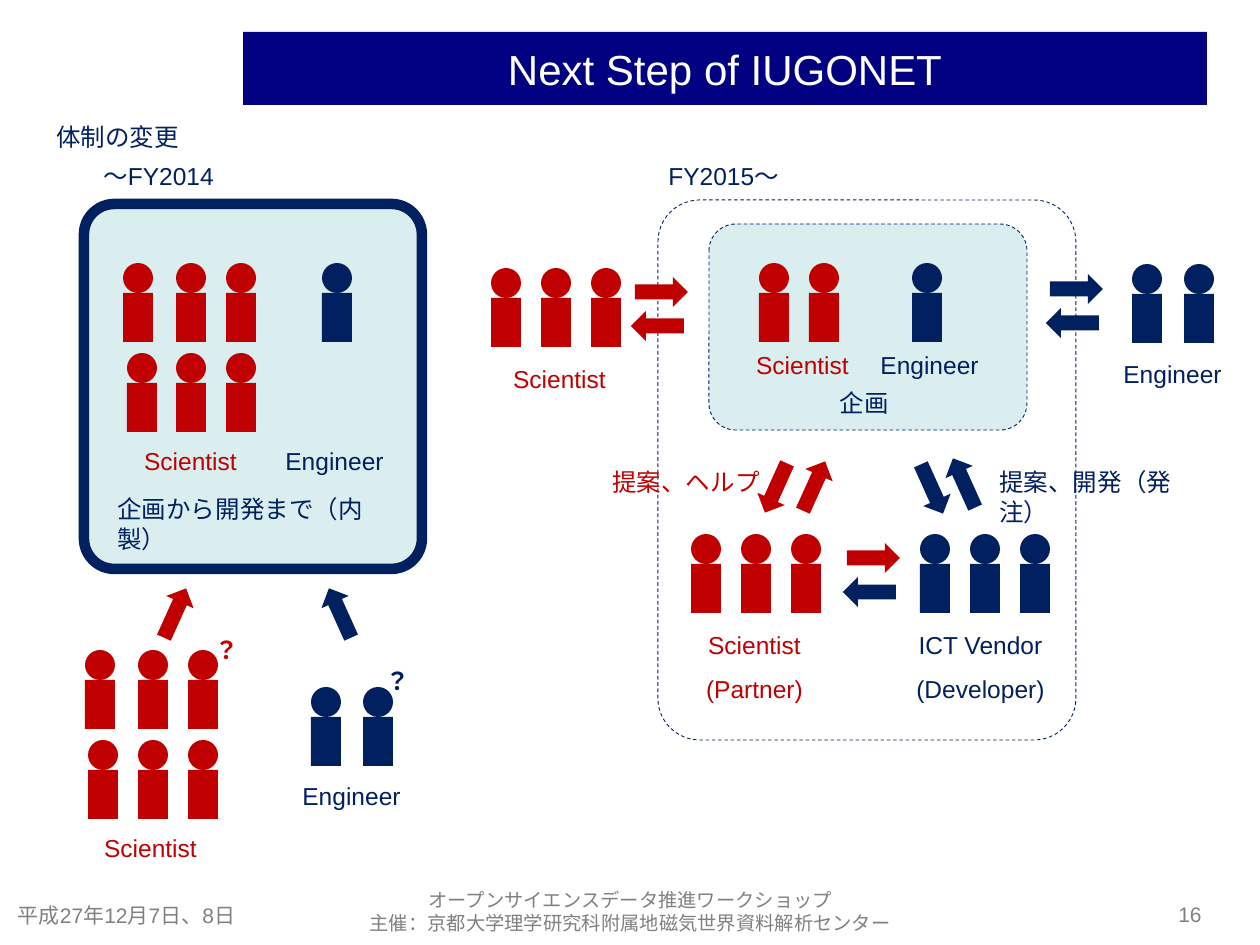
from lxml.etree import SubElement
from pptx import Presentation
from pptx.dml.color import RGBColor
from pptx.enum.dml import MSO_LINE
from pptx.enum.shapes import MSO_SHAPE
from pptx.enum.text import MSO_ANCHOR, PP_ALIGN
from pptx.oxml.ns import qn
from pptx.util import Emu, Pt

PX = 914400 / 126
RED, NAVY, GREY = "C00000", "002060", "808080"
PALE, TITLE_BLUE, WHITE = "DAEDEF", "000080", "FFFFFF"
HEAD, BODY_HEIGHT = 30, 49
LEFT, CENTER, RIGHT = PP_ALIGN.LEFT, PP_ALIGN.CENTER, PP_ALIGN.RIGHT


def px(value):
    return Emu(round(value * PX))


def rgb(hex_colour):
    return RGBColor.from_string(hex_colour)


class Diagram:
    """Holds the slide and draws its elements in the shared style."""

    latin, japanese, size = "Arial", "Noto Sans CJK JP", 14

    def __init__(self, slide):
        self.shapes = slide.shapes

    def shape(self, kind, box, fill=None, rotation=0):
        shape = self.shapes.add_shape(kind, *map(px, box))
        shape.shadow.inherit = False
        shape.rotation = rotation
        shape.line.fill.background()
        if fill:
            shape.fill.solid()
            shape.fill.fore_color.rgb = rgb(fill)
        else:
            shape.fill.background()
        return shape

    def frame(self, box, corner, width, fill=None, dash=None):
        frame = self.shape(MSO_SHAPE.ROUNDED_RECTANGLE, box, fill)
        frame.adjustments[0] = corner
        frame.line.color.rgb = rgb(NAVY)
        frame.line.width = Pt(width)
        if dash:
            frame.line.dash_style = dash

    def set_lines(self, text_frame, lines, colour, align, size, bold=False, gap=0):
        text_frame.word_wrap = True
        for index, line in enumerate(lines):
            paragraph = text_frame.paragraphs[0] if index == 0 else text_frame.add_paragraph()
            paragraph.text = line
            paragraph.alignment = align
            if index and gap:
                paragraph.space_before = Pt(gap)
            font = paragraph.font
            font.size, font.bold, font.name = Pt(size), bold, self.latin
            font.color.rgb = rgb(colour)
            properties = paragraph._p.pPr.find(qn("a:defRPr"))
            SubElement(properties, qn("a:ea")).set("typeface", self.japanese)

    def title(self, box, text):
        banner = self.shape(MSO_SHAPE.RECTANGLE, box, TITLE_BLUE)
        text_frame = banner.text_frame
        text_frame.margin_left = text_frame.margin_right = 0
        text_frame.margin_top = text_frame.margin_bottom = 0
        text_frame.vertical_anchor = MSO_ANCHOR.MIDDLE
        self.set_lines(text_frame, [text], WHITE, CENTER, 24)

    def label(self, box, *lines, colour=NAVY, align=LEFT, bold=False):
        label = self.shapes.add_textbox(*map(px, box))
        self.set_lines(label.text_frame, lines, colour, align, self.size, bold, gap=8)

    def footer(self, box, *lines, align=CENTER, size=12):
        footer = self.shapes.add_textbox(*map(px, box))
        footer.text_frame.vertical_anchor = MSO_ANCHOR.MIDDLE
        self.set_lines(footer.text_frame, lines, GREY, align, size)

    def people(self, lefts, top, colour):
        for left in lefts:
            self.shape(MSO_SHAPE.OVAL, (left, top, HEAD, HEAD), colour)
            self.shape(MSO_SHAPE.RECTANGLE, (left, top + HEAD, HEAD, BODY_HEIGHT), colour)

    def level_arrow(self, kind, left, top, colour):
        self.shape(kind, (left, top, 53, 30), colour)

    def slanted_arrow(self, left, top, rotation, colour):
        self.shape(MSO_SHAPE.DOWN_ARROW, (left, top, 30, 54), colour, rotation)


def main():
    presentation = Presentation()
    presentation.slide_width, presentation.slide_height = px(1260), px(945)
    diagram = Diagram(presentation.slides.add_slide(presentation.slide_layouts[6]))

    diagram.title((243, 32, 964, 73), "Next Step of IUGONET")
    diagram.frame((84, 204, 338, 365), 0.09, 6, PALE)
    diagram.frame((658, 200, 418, 540), 0.1, 0.5, dash=MSO_LINE.DASH)
    diagram.frame((709, 224, 318, 206), 0.13, 0.5, PALE, MSO_LINE.DASH)

    for lefts, top, colour in (
        ((123, 176, 226), 263, RED),
        ((127, 176, 226), 353, RED),
        ((322,), 263, NAVY),
        ((85, 138, 188), 650, RED),
        ((88, 138, 188), 740, RED),
        ((311, 363), 687, NAVY),
        ((491, 541, 591), 268, RED),
        ((759, 809), 263, RED),
        ((912,), 263, NAVY),
        ((1132, 1184), 264, NAVY),
        ((691, 741, 791), 534, RED),
        ((920, 970, 1020), 534, NAVY),
    ):
        diagram.people(lefts, top, colour)

    for left, top in ((125, 440), (85, 827), (494, 358), (737, 344)):
        diagram.label((left, top, 131, 43), "Scientist", colour=RED, align=CENTER)
    for left, top in ((273, 440), (290, 775), (868, 344), (1111, 353)):
        diagram.label((left, top, 135, 43), "Engineer")
    diagram.label((689, 624, 131, 87), "Scientist", "(Partner)", colour=RED, align=CENTER)
    diagram.label((894, 624, 173, 87), "ICT Vendor", "(Developer)", align=CENTER)

    diagram.label((44, 116, 212, 49), "体制の変更")
    diagram.label((91, 155, 212, 49), "～FY2014")
    diagram.label((656, 155, 212, 49), "FY2015～")
    diagram.label((105, 488, 302, 71), "企画から開発まで（内製）")
    diagram.label((803, 382, 123, 52), "企画", align=CENTER)
    diagram.label((600, 461, 179, 52), "提案、ヘルプ", colour=RED)
    diagram.label((987, 461, 229, 52), "提案、開発（発注）")
    diagram.label((202, 629, 59, 52), "？", colour=RED, bold=True)
    diagram.label((373, 660, 59, 52), "？", bold=True)

    for left, top, rotation, colour in (
        (761, 461, 24.3, RED),
        (799, 459, 204.3, RED),
        (160, 586, 204.3, RED),
        (917, 462, 335.7, NAVY),
        (949, 456, 155.7, NAVY),
        (325, 586, 155.7, NAVY),
    ):
        diagram.slanted_arrow(left, top, rotation, colour)

    for left, top, outward, back in (
        (635, 277, RED, RED),
        (1050, 274, NAVY, NAVY),
        (847, 543, RED, NAVY),
    ):
        diagram.level_arrow(MSO_SHAPE.RIGHT_ARROW, left, top, outward)
        diagram.level_arrow(MSO_SHAPE.LEFT_ARROW, left - 4, top + 34, back)

    diagram.footer((0, 890, 253, 50), "平成27年12月7日、8日")
    diagram.footer(
        (184, 883, 893, 57),
        "オープンサイエンスデータ推進ワークショップ",
        "主催：京都大学理学研究科附属地磁気世界資料解析センター",
        size=11,
    )
    diagram.footer((1145, 893, 69, 42), "16", align=RIGHT)
    presentation.save("out.pptx")


if __name__ == "__main__":
    main()
